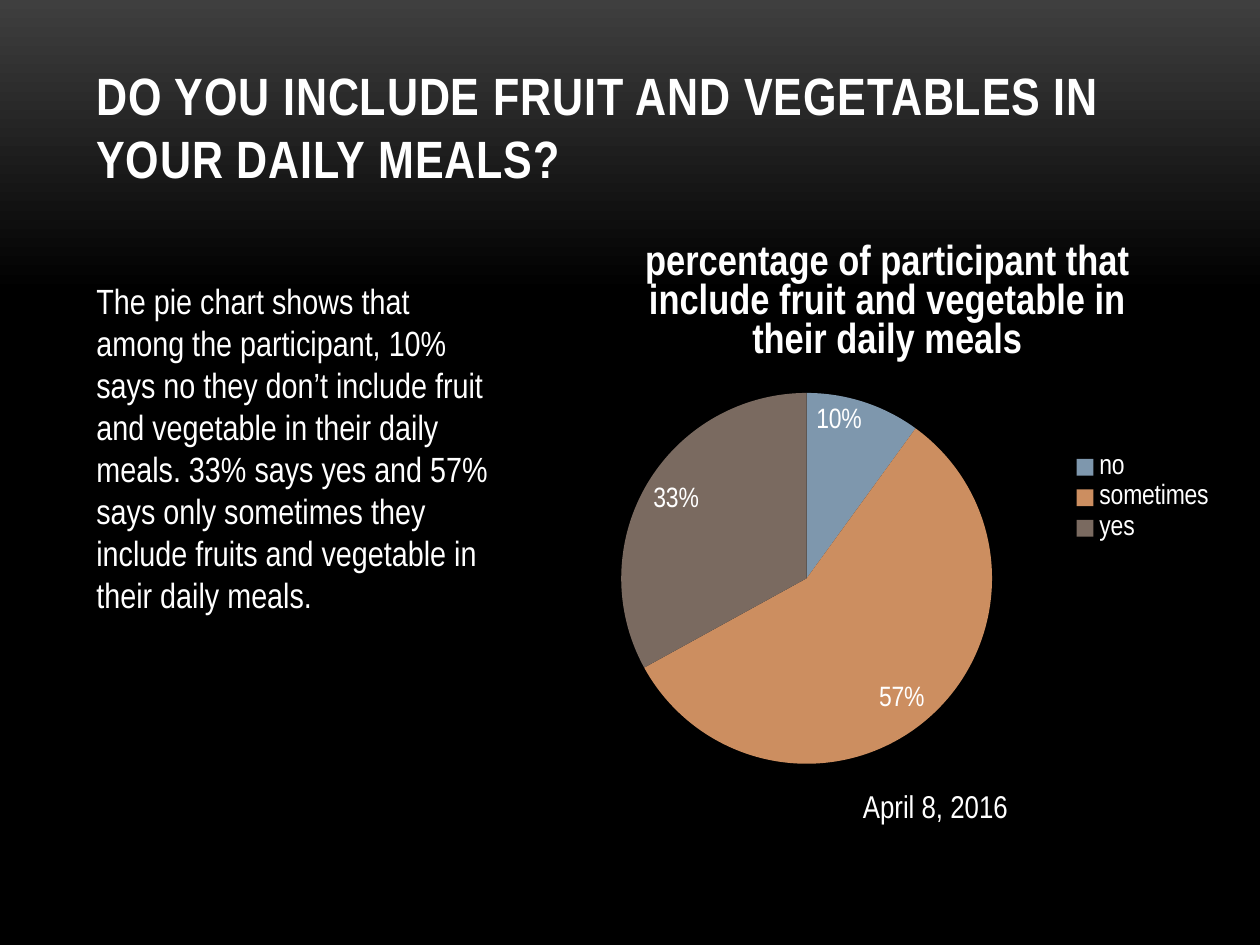
import copy

import pptx
import pptx.chart.data
import pptx.dml.color
import pptx.enum.chart
import pptx.enum.text
import pptx.util

COLORS = {
    "top": "3F3F3F",
    "base": "000000",
    "text": "FFFFFF",
    "no": "7E97AD",
    "sometimes": "CC8E60",
    "yes": "7A6A60",
}
ANSWERS = {"no": 10, "sometimes": 57, "yes": 33}


class SurveySlide:
    """Holds the style and the page; lengths are on a 120 x 90 grid."""

    FONT = "Arial Narrow"
    COLUMNS, ROWS = 120, 90

    def __init__(self, deck):
        self.column = deck.slide_width / self.COLUMNS
        self.row = deck.slide_height / self.ROWS
        self.page = deck.slides.add_slide(deck.slide_layouts[6])

    def color(self, name):
        return pptx.dml.color.RGBColor.from_string(COLORS[name])

    def place(self, left, top, width, height):
        return (round(left * self.column), round(top * self.row),
                round(width * self.column), round(height * self.row))

    def style(self, font, size, bold=False):
        font.name = self.FONT
        font.size = pptx.util.Pt(size)
        font.bold = bold
        font.color.rgb = self.color("text")

    def background(self):
        fill = self.page.background.fill
        fill.gradient()
        fill.gradient_angle = 270
        # The base colour holds from 31 % down to the bottom edge
        stop_list = fill._fill._gradFill.gsLst
        stop_list.append(copy.deepcopy(stop_list[-1]))
        for stop, name, position in zip(
                fill.gradient_stops, ("top", "base", "base"), (0, 0.31, 1)):
            stop.color.rgb = self.color(name)
            stop.position = position

    def text(self, words, grid, size, bold=False, spacing=None, bottom=False):
        box = self.page.shapes.add_textbox(*self.place(*grid))
        frame = box.text_frame
        frame.word_wrap = True
        frame.text = words
        if bottom:
            frame.vertical_anchor = pptx.enum.text.MSO_ANCHOR.BOTTOM
        span = frame.paragraphs[0].runs[0]
        self.style(span.font, size, bold)
        if spacing:
            span.font._element.set("spc", str(round(spacing * 100)))

    def pie(self, title, answers, grid):
        data = pptx.chart.data.CategoryChartData()
        data.categories = list(answers)
        data.add_series("Series 1", list(answers.values()))
        chart = self.page.shapes.add_chart(
            pptx.enum.chart.XL_CHART_TYPE.PIE, *self.place(*grid), data).chart
        self.style(chart.font, 10)

        # Title and legend
        chart.has_title = True
        heading = chart.chart_title.text_frame
        heading.text = title
        self.style(heading.paragraphs[0].runs[0].font, 24, bold=True)
        chart.chart_title.include_in_layout = False
        chart.has_legend = True
        chart.legend.position = pptx.enum.chart.XL_LEGEND_POSITION.RIGHT
        chart.legend.include_in_layout = False
        self.style(chart.legend.font, 16)

        # Slices and their percentages
        plot = chart.plots[0]
        plot.vary_by_categories = True
        for index, name in enumerate(answers):
            fill = plot.series[0].points[index].format.fill
            fill.solid()
            fill.fore_color.rgb = self.color(name)
        labels = plot.series[0].data_labels
        labels.show_percentage = True
        labels.show_value = False
        labels.number_format = "0%"
        labels.number_format_is_linked = False
        labels.position = pptx.enum.chart.XL_LABEL_POSITION.INSIDE_END
        self.style(labels.font, 16)


def main():
    deck = pptx.Presentation()
    deck.slide_width = pptx.util.Inches(10)
    deck.slide_height = pptx.util.Inches(7.5)
    slide = SurveySlide(deck)
    slide.background()

    # Heading
    slide.text("DO YOU INCLUDE FRUIT AND VEGETABLES IN YOUR DAILY MEALS?",
               (8, 3.6, 104, 15), 30, bold=True, spacing=0.5, bottom=True)

    # Chart with its date
    slide.pie("percentage of participant that include fruit and vegetable "
              "in their daily meals", ANSWERS, (52, 20.4, 65, 54))
    slide.text("April 8, 2016", (81, 74.4, 27, 4.8), 18)

    # Findings
    slide.text("The pie chart shows that among the participant, 10% says no "
               "they don’t include fruit and vegetable in their daily meals. "
               "33% says yes and 57% says only sometimes they include fruits "
               "and vegetable in their daily meals.",
               (8, 26, 40, 33.5), 20)

    deck.save("out.pptx")


if __name__ == "__main__":
    main()
